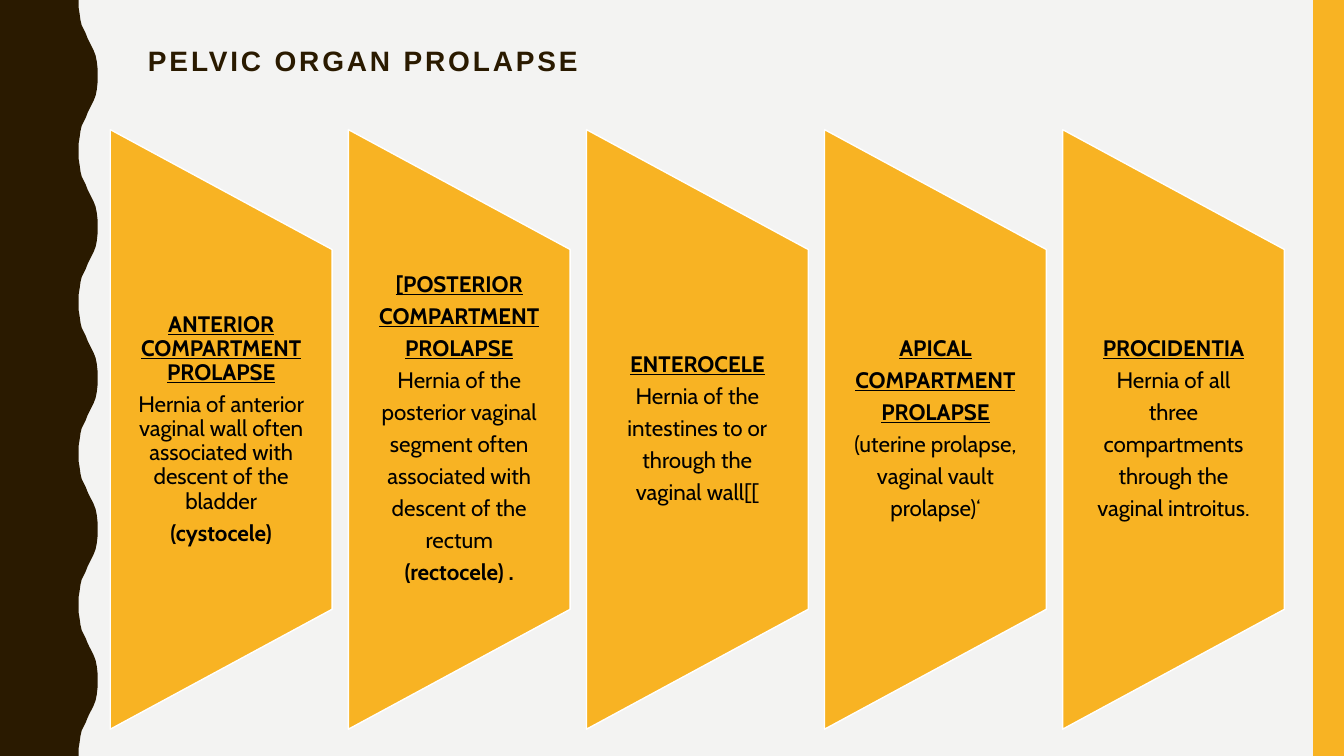
from pptx import Presentation
from pptx.dml.color import RGBColor as Rgb
from pptx.enum.shapes import MSO_SHAPE as Kind
from pptx.enum.text import MSO_ANCHOR as Anchor, PP_ALIGN as Align
from pptx.util import Cm, Pt

# Content: heading lines, body lines, bold closing lines
TITLE = "PELVIC ORGAN PROLAPSE"
PANELS = [
    (["ANTERIOR COMPARTMENT PROLAPSE"],
     ["Hernia of anterior vaginal wall often associated with descent of the bladder"],
     ["(cystocele)"]),
    (["[POSTERIOR", "COMPARTMENT", "PROLAPSE"],
     ["Hernia of the", "posterior vaginal", "segment often",
      "associated with", "descent of the", "rectum"],
     ["(rectocele) ."]),
    (["ENTEROCELE"],
     ["Hernia of the", "intestines to or", "through the", "vaginal wall[["],
     []),
    (["APICAL", "COMPARTMENT", "PROLAPSE"],
     ["(uterine prolapse,", "vaginal vault", "prolapse)‘"],
     []),
    (["PROCIDENTIA"],
     ["Hernia of all", "three", "compartments", "through the", "vaginal introitus."],
     []),
]

THEME = {
    "back": Rgb.from_string("F3F3F2"),
    "dark": Rgb.from_string("2A1A00"),
    "gold": Rgb.from_string("F8B323"),
    "edge": Rgb.from_string("FFFFFF"),
    "ink": Rgb.from_string("000000"),
    "head": "Arial",
    "body": "Cabin",
    "big": 20,
    "small": 16,
}

# Sizes in centimetres
WIDE, HIGH = 33.87, 19.05
BAR = 0.78
LEFT, STEP, MID = 2.78, 6.0, 10.82
PANEL_W, PANEL_H, TEXT_H = 5.59, 15.11, 9.07

# One half wave of the left border, as (x, y)
WAVE = [(1.98, 0), (1.98, 0.18), (2.01, 0.36), (2.03, 0.51), (2.06, 0.64),
        (2.11, 0.74), (2.16, 0.84), (2.21, 0.97), (2.26, 1.07), (2.31, 1.17),
        (2.36, 1.27), (2.41, 1.4), (2.44, 1.55), (2.46, 1.73), (2.46, 1.9)]
HALVES = 10

deck = Presentation()
deck.slide_width, deck.slide_height = Cm(WIDE), Cm(HIGH)
slide = deck.slides.add_slide(deck.slide_layouts[6])
slide.background.fill.solid()
slide.background.fill.fore_color.rgb = THEME["back"]
shapes = slide.shapes


def paint(shape, fill, edge=None):
    shape.shadow.inherit = False
    shape.fill.solid()
    shape.fill.fore_color.rgb = fill
    if edge is None:
        shape.line.fill.background()
    else:
        shape.line.color.rgb = edge
        shape.line.width = Pt(1)


def frame(x, y, w, h, anchor=Anchor.TOP, side=0.25, edge=0.13):
    box = shapes.add_textbox(Cm(x), Cm(y), Cm(w), Cm(h)).text_frame
    box.word_wrap = True
    box.vertical_anchor = anchor
    box.margin_left = box.margin_right = Cm(side)
    box.margin_top = box.margin_bottom = Cm(edge)
    return box


def write(box, text, font, size, color, bold=False, under=False,
          align=Align.LEFT, after=0, track=0):
    first = box.paragraphs[0]
    para = box.add_paragraph() if first.runs else first
    para.alignment = align
    para.line_spacing = 0.9
    para.space_after = Pt(after)
    run = para.add_run()
    run.text = text
    run.font.name, run.font.size = font, Pt(size)
    run.font.bold, run.font.underline = bold, under
    run.font.color.rgb = color
    if track:
        run._r.get_or_add_rPr().set("spc", str(track * 100))


# Wavy left border: every second half wave is mirrored
half = HIGH / HALVES
points = []
for i in range(HALVES):
    if i % 2 == 0:
        points += [(x, i * half + y) for x, y in WAVE]
    else:
        points += [(x, (i + 1) * half - y) for x, y in reversed(WAVE)]
points += [(WAVE[0][0], HIGH), (0, HIGH)]
pen = shapes.build_freeform(0, 0)
pen.add_line_segments([(Cm(x), Cm(y)) for x, y in points], close=True)
paint(pen.convert_to_shape(), THEME["dark"])

# Right bar
bar = shapes.add_shape(Kind.RECTANGLE, Cm(WIDE - BAR), 0, Cm(BAR), Cm(HIGH))
paint(bar, THEME["gold"])

# Title
write(frame(3.48, 1.07, 28.27, 4.14), TITLE, THEME["head"], THEME["big"],
      THEME["dark"], bold=True, track=2)

# Panels, each a turned trapezoid with its text on top
for i, (heads, lines, tails) in enumerate(PANELS):
    left = LEFT + i * STEP
    panel = shapes.add_shape(
        Kind.FLOWCHART_MANUAL_OPERATION,
        Cm(left + (PANEL_W - PANEL_H) / 2), Cm(MID - PANEL_W / 2),
        Cm(PANEL_H), Cm(PANEL_W))
    panel.rotation = 270
    paint(panel, THEME["gold"], THEME["edge"])

    box = frame(left, MID - TEXT_H / 2, PANEL_W, TEXT_H,
                anchor=Anchor.MIDDLE, side=0.28, edge=0)
    for group, bold, under in ((heads, True, True), (lines, False, False),
                               (tails, True, False)):
        for text in group:
            write(box, text, THEME["body"], THEME["small"], THEME["ink"],
                  bold=bold, under=under, align=Align.CENTER, after=5.6)

deck.save("out.pptx")
